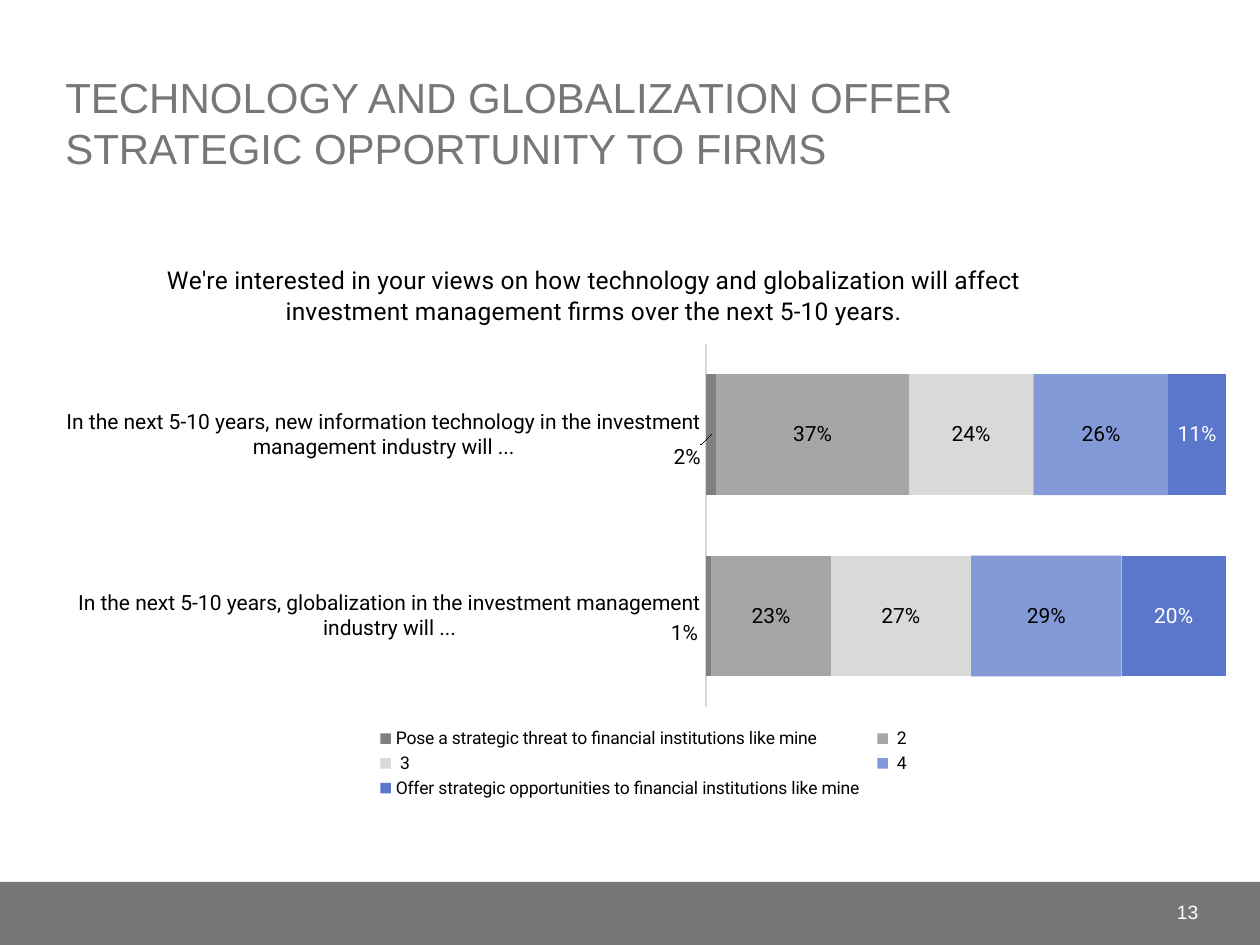
"""Builds a slide on how technology and globalization affect investment firms."""
import pptx
import pptx.chart.data
import pptx.dml.color
import pptx.enum.chart
import pptx.enum.shapes
import pptx.enum.text
import pptx.oxml
import pptx.oxml.ns
import pptx.util

Inches = pptx.util.Inches
GREY, BLUE, BLACK, WHITE = "777777", "5B77CC", "000000", "FFFFFF"
HEADING = "TECHNOLOGY AND GLOBALIZATION OFFER STRATEGIC OPPORTUNITY TO FIRMS"
QUESTION = ("We're interested in your views on how technology and globalization "
            "will affect investment management firms over the next 5-10 years.")
TOPICS = [
    "In the next 5-10 years, globalization in the investment management industry will ...",
    "In the next 5-10 years, new information technology in the investment management "
    "industry will ...",
]
RATINGS = [
    ("Pose a strategic threat to financial institutions like mine", (0.01, 0.02), "808080", BLACK),
    (" 2 ", (0.23, 0.37), "A6A6A6", BLACK),
    (" 3 ", (0.27, 0.24), "D9D9D9", BLACK),
    (" 4 ", (0.29, 0.26), BLUE, BLACK),
    ("Offer strategic opportunities to financial institutions like mine",
     (0.2, 0.11), BLUE, WHITE),
]
THREAT, FOURTH = 0, 3


def rgb(value):
    """Return the colour for a hex string."""
    return pptx.dml.color.RGBColor.from_string(value)


def style_font(font, name, size, color):
    """Set typeface, size in points and colour."""
    font.name, font.size, font.bold = name, pptx.util.Pt(size), False
    font.color.rgb = rgb(color)


def add_text(slide, box, text, size, color, anchor, align):
    """Add a wrapped text box with one formatted paragraph."""
    frame = slide.shapes.add_textbox(*map(Inches, box)).text_frame
    frame.word_wrap = True
    frame.vertical_anchor = anchor
    frame.text = text
    frame.paragraphs[0].alignment = align
    style_font(frame.paragraphs[0].runs[0].font, "Arial", size, color)


def add_footer_band(slide):
    """Add the grey band along the foot of the slide."""
    band = slide.shapes.add_shape(
        pptx.enum.shapes.MSO_SHAPE.RECTANGLE, 0, Inches(7), Inches(10), Inches(0.5))
    band.shadow.inherit = False
    band.fill.solid()
    band.fill.fore_color.rgb = rgb(GREY)
    band.line.fill.background()


def manual_layout(inner=False, edge=True, **fractions):
    """Return a chart layout element from fractions of the chart's size."""
    target = '<c:layoutTarget val="inner"/>' if inner else ""
    modes = '<c:xMode val="edge"/><c:yMode val="edge"/>' if edge else ""
    values = "".join(f'<c:{key} val="{value}"/>' for key, value in fractions.items())
    return pptx.oxml.parse_xml(
        f'<c:layout {pptx.oxml.ns.nsdecls("c")}><c:manualLayout>'
        f"{target}{modes}{values}</c:manualLayout></c:layout>")


def place(parent, layout, after=None):
    """Put a layout in a chart part, after the named child or first."""
    for old in parent.findall(pptx.oxml.ns.qn("c:layout")):
        parent.remove(old)
    if after is None:
        parent.insert(0, layout)
    else:
        parent.find(pptx.oxml.ns.qn(after)).addnext(layout)


def style_axes(chart):
    """Show only topic labels and the thin line beside the bars."""
    topics, shares = chart.category_axis, chart.value_axis
    for axis in (topics, shares):
        axis.has_major_gridlines = False
        axis.major_tick_mark = axis.minor_tick_mark = pptx.enum.chart.XL_TICK_MARK.NONE
    style_font(topics.tick_labels.font, "Roboto", 12, BLACK)
    topics.format.line.color.rgb = rgb("D9D9D9")
    topics.format.line.width = pptx.util.Pt(0.75)
    shares.tick_label_position = pptx.enum.chart.XL_TICK_LABEL_POSITION.NONE
    shares.format.line.fill.background()
    shares.minimum_scale, shares.maximum_scale = 0, 1


def style_series(series, fill, label_color):
    """Colour one rating and label its shares."""
    series.format.fill.solid()
    series.format.fill.fore_color.rgb = rgb(fill)
    labels = series.data_labels
    labels.show_value = True
    labels.number_format, labels.number_format_is_linked = "0%", False
    style_font(labels.font, "Roboto", 12, label_color)


def shift_label(point, across, down):
    """Move one share label off its narrow bar."""
    label = point.data_label
    style_font(label.font, "Roboto", 12, BLACK)
    label.position = pptx.enum.chart.XL_LABEL_POSITION.CENTER
    place(label.font._element.getparent().getparent().getparent().getparent(),
          manual_layout(edge=False, x=across, y=down), "c:idx")


def add_ratings_chart(slide):
    """Add the stacked bar chart of ratings by topic."""
    data = pptx.chart.data.CategoryChartData(number_format="0%")
    data.categories = TOPICS
    for name, shares, _, _ in RATINGS:
        data.add_series(name, shares)
    chart = slide.shapes.add_chart(
        pptx.enum.chart.XL_CHART_TYPE.BAR_STACKED_100,
        *map(Inches, (0.33, 1.92, 9.59, 4.5)), data).chart
    style_font(chart.font, "Roboto", 12, BLACK)

    title = chart.chart_title
    title.text_frame.text = QUESTION
    style_font(title.text_frame.paragraphs[0].runs[0].font, "Roboto", 14, BLACK)
    title.include_in_layout = False
    place(title._element, manual_layout(x=0.1, y=0.03), "c:tx")

    chart.has_legend = True
    chart.legend.position = pptx.enum.chart.XL_LEGEND_POSITION.BOTTOM
    chart.legend.include_in_layout = False
    style_font(chart.legend.font, "Roboto", 10, BLACK)
    place(chart.legend._element, manual_layout(x=0.27, y=0.85, w=0.46, h=0.14), "c:legendPos")

    plot = chart.plots[0]
    plot.gap_width, plot.overlap, plot.vary_by_categories = 50, 100, False
    place(plot._element.getparent(),
          manual_layout(inner=True, x=0.55, y=0.18, w=0.43, h=0.64))
    style_axes(chart)
    for series, (_, _, fill, label_color) in zip(plot.series, RATINGS):
        style_series(series, fill, label_color)
    tint = next(plot.series[FOURTH]._element.iter(pptx.oxml.ns.qn("a:srgbClr")))
    tint.append(pptx.oxml.parse_xml(
        f'<a:alpha {pptx.oxml.ns.nsdecls("a")} val="75000"/>'))
    for index, down in enumerate((0.03, 0.04)):
        shift_label(plot.series[THREAT].points[index], -0.02, down)


def main():
    """Build and save the slide."""
    deck = pptx.Presentation()
    deck.slide_width, deck.slide_height = Inches(10), Inches(7.5)
    slide = deck.slides.add_slide(deck.slide_layouts[6])
    anchors, aligns = pptx.enum.text.MSO_ANCHOR, pptx.enum.text.PP_ALIGN
    add_footer_band(slide)
    add_text(slide, (0.42, 0.17, 9.16, 1.25), HEADING, 24, GREY, anchors.BOTTOM, aligns.LEFT)
    add_text(slide, (8.75, 7.04, 0.86, 0.4), "13", 11, WHITE, anchors.MIDDLE, aligns.RIGHT)
    add_ratings_chart(slide)
    deck.save("out.pptx")


if __name__ == "__main__":
    main()
